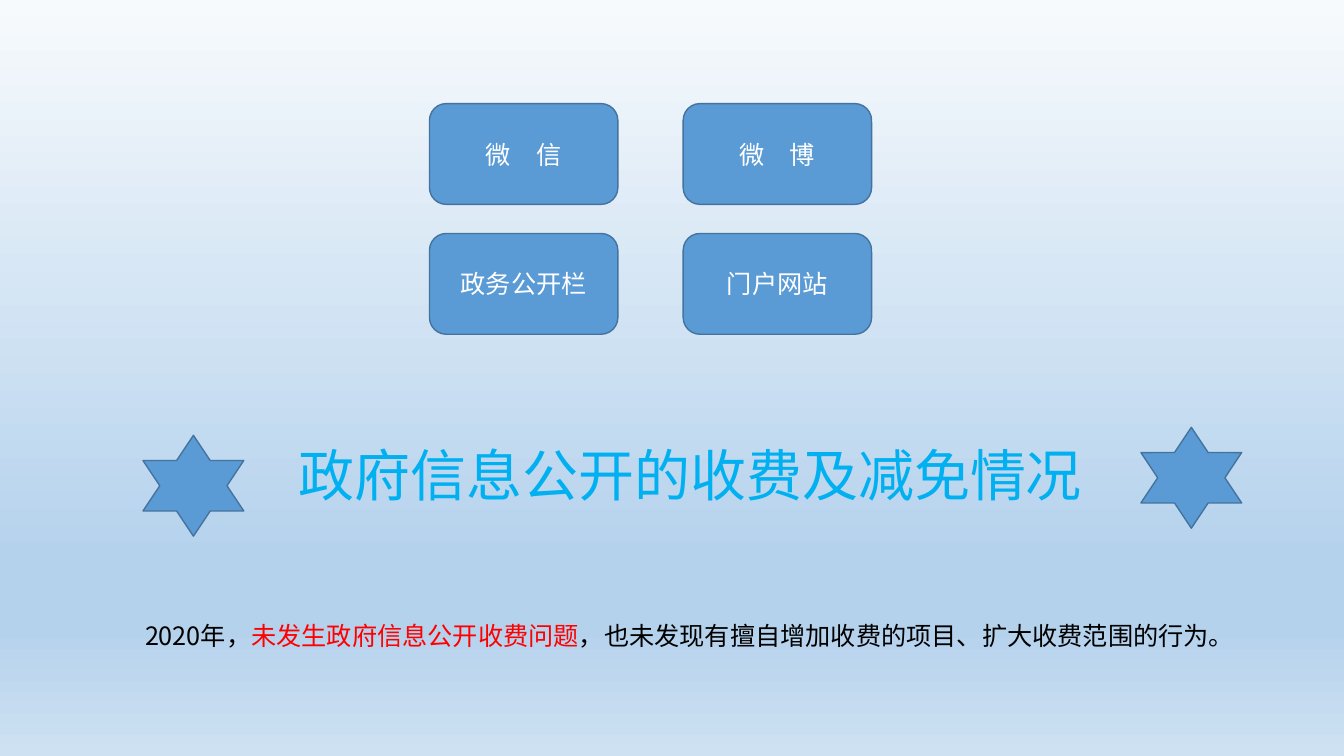
from copy import deepcopy
from dataclasses import dataclass

from pptx import Presentation
from pptx.dml.color import RGBColor
from pptx.enum.shapes import MSO_SHAPE as Shape
from pptx.enum.text import MSO_ANCHOR as Anchor, MSO_AUTO_SIZE as AutoSize, PP_ALIGN as Align
from pptx.oxml.ns import qn
from pptx.util import Pt


@dataclass(frozen=True)
class Theme:
    fill: str = "5B9BD5"
    outline: str = "43739E"
    light: str = "FFFFFF"
    dark: str = "000000"
    title: str = "00B0F0"
    alert: str = "FF0000"
    background: tuple = ((0, "F7FAFD"), (74, "B5D2EC"), (83, "B5D2EC"), (100, "CEE1F2"))
    label_font: str = "Calibri"
    title_font: str = "Arial"
    body_font: str = "Noto Sans CJK SC"
    title_size: int = 40
    body_size: int = 18


class SlideBuilder:
    """Draw styled elements on one slide, with lengths in points."""

    def __init__(self, slide, theme):
        self.slide = slide
        self.theme = theme

    def background(self):
        fill = self.slide.background.fill
        fill.gradient()
        fill.gradient_angle = 270
        stops = self.slide.element.find(".//" + qn("a:gsLst"))
        template = deepcopy(stops[0])
        for stop in list(stops):
            stops.remove(stop)
        for _ in self.theme.background:
            stops.append(deepcopy(template))
        for stop, (percent, color) in zip(fill.gradient_stops, self.theme.background):
            stop.position = percent / 100
            stop.color.rgb = RGBColor.from_string(color)

    def format(self, para, name, size, color, align):
        para.alignment = align
        para.font.name = name
        para.font.size = Pt(size)
        para.font.color.rgb = RGBColor.from_string(color)

    def shape(self, kind, left, top, width, height, label=""):
        theme = self.theme
        shape = self.slide.shapes.add_shape(kind, Pt(left), Pt(top), Pt(width), Pt(height))
        shape.shadow.inherit = False
        shape.fill.solid()
        shape.fill.fore_color.rgb = RGBColor.from_string(theme.fill)
        shape.line.color.rgb = RGBColor.from_string(theme.outline)
        shape.line.width = Pt(1)
        if label:
            frame = shape.text_frame
            frame.text = label
            frame.vertical_anchor = Anchor.MIDDLE
            self.format(frame.paragraphs[0], theme.label_font, theme.body_size,
                        theme.light, Align.CENTER)

    def title(self, text, left, top, width, height):
        title = self.slide.shapes.title
        title.left, title.top, title.width, title.height = map(Pt, (left, top, width, height))
        frame = title.text_frame
        frame.text = text
        frame.word_wrap = True
        frame.auto_size = AutoSize.NONE
        frame.vertical_anchor = Anchor.TOP
        self.format(frame.paragraphs[0], self.theme.title_font, self.theme.title_size,
                    self.theme.title, Align.CENTER)

    def text(self, parts, left, top, width, height):
        box = self.slide.shapes.add_textbox(Pt(left), Pt(top), Pt(width), Pt(height))
        frame = box.text_frame
        frame.word_wrap = True
        para = frame.paragraphs[0]
        self.format(para, self.theme.body_font, self.theme.body_size,
                    self.theme.dark, Align.LEFT)
        for words, color in parts:
            span = para.add_run()
            span.text = words
            span.font.color.rgb = RGBColor.from_string(color)


def main():
    theme = Theme()
    deck = Presentation()
    deck.slide_width, deck.slide_height = Pt(960), Pt(540)
    page = SlideBuilder(deck.slides.add_slide(deck.slide_layouts[5]), theme)
    page.background()

    channels = (("微　信", "微　博"), ("政务公开栏", "门户网站"))
    for row, labels in enumerate(channels):
        for column, label in enumerate(labels):
            page.shape(Shape.ROUNDED_RECTANGLE, 306.8 + column * 181.2, 74 + row * 92.8,
                       134.6, 72, label)

    page.title("政府信息公开的收费及减免情况", 55.4, 311, 875.5, 55.4)
    page.text((("2020年，", theme.dark),
               ("未发生政府信息公开收费问题", theme.alert),
               ("，也未发现有擅自增加收费的项目、扩大收费范围的行为。", theme.dark)),
              96.5, 439.2, 782, 29)
    for left, top in ((102.2, 311), (815, 305.3)):
        page.shape(Shape.STAR_6_POINT, left, top, 72, 72)

    deck.save("out.pptx")


if __name__ == "__main__":
    main()
